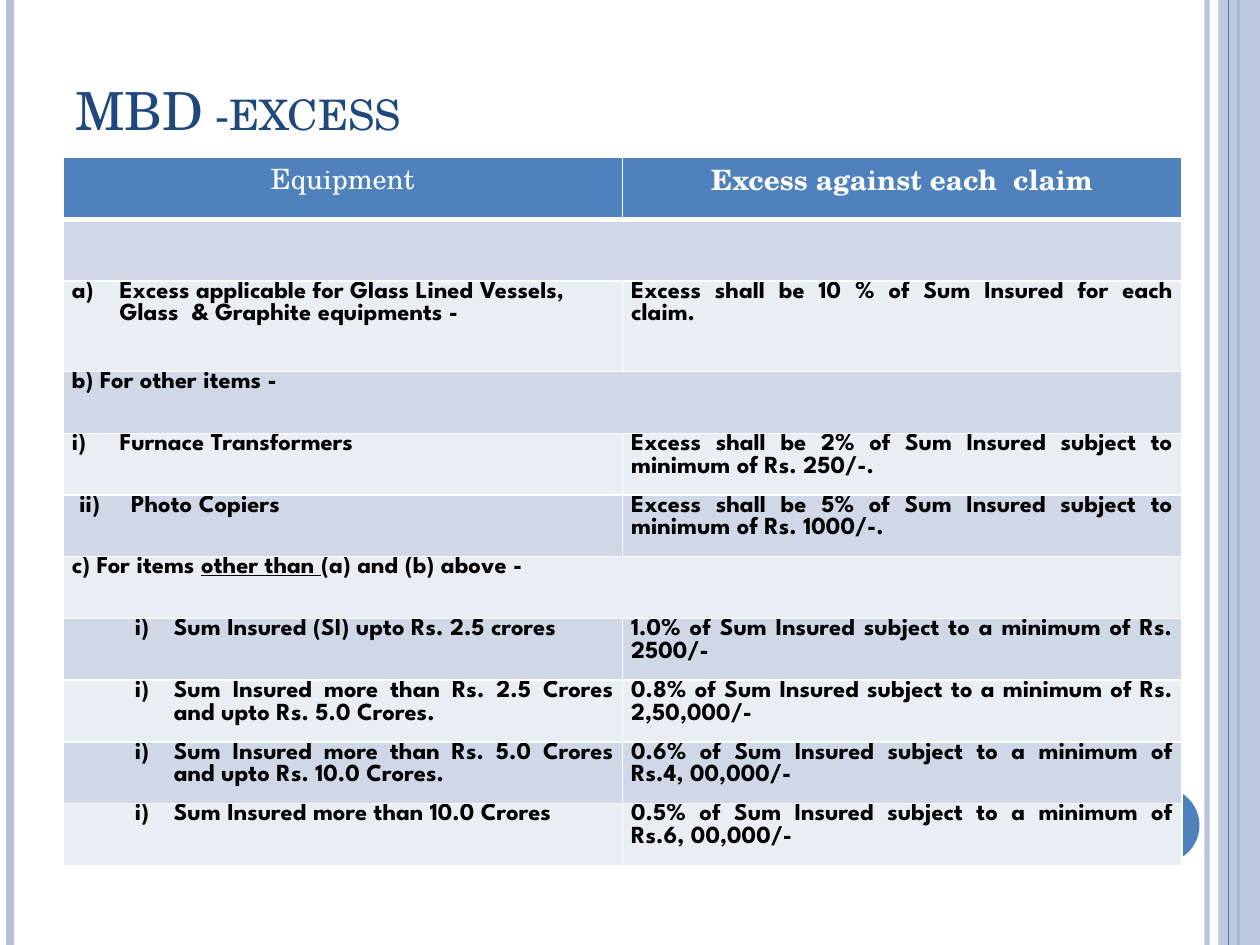
"""Build a slide with a table of insurance excess amounts."""
from dataclasses import dataclass
from typing import Optional

import pptx
import pptx.dml.color
import pptx.enum.shapes
import pptx.enum.text
import pptx.oxml
import pptx.oxml.ns
import pptx.util

Inches = pptx.util.Inches
Pt = pptx.util.Pt
RGBColor = pptx.dml.color.RGBColor
Align = pptx.enum.text.PP_ALIGN
Shape = pptx.enum.shapes.MSO_SHAPE
qn = pptx.oxml.ns.qn

BLUE = RGBColor(0x4F, 0x81, 0xBD)
PALE = RGBColor(0xB3, 0xC1, 0xDB)
NAVY = RGBColor(0x1F, 0x49, 0x7D)
WHITE = RGBColor(0xFF, 0xFF, 0xFF)
BLACK = RGBColor(0x00, 0x00, 0x00)
BANDS = (RGBColor(0xD0, 0xD8, 0xE8), RGBColor(0xE9, 0xED, 0xF4))
SERIF = "TeX Gyre Schola"
SANS = "League Spartan"


@dataclass
class Stripe:
    x: float
    width: float
    color: RGBColor
    alpha: int = 100


@dataclass
class Bullet:
    style: str
    left: float
    hang: float
    start: int = 1


@dataclass
class Entry:
    words: tuple[str, ...] = ()
    excess: Optional[str] = None
    bullet: Optional[Bullet] = None
    align: Align = Align.LEFT
    height: float = 0.49


ALPHA = Bullet("alphaLcParenR", 0.38, 0.38)
ROMAN = Bullet("romanLcParenR", 0.38, 0.38)
SECOND = Bullet("romanLcParenR", 0.47, 0.41, 2)
INNER = Bullet("romanLcParenR", 0.81, 0.31)

EDGES = (
    Stripe(9.58, 3, PALE, 93),
    Stripe(0.08, 4.5, PALE),
    Stripe(9.83, 1.5, BLUE),
)
FRONT = Stripe(9.75, 0.75, BLUE)

ENTRIES = (
    Entry(),
    Entry(("Excess applicable for Glass Lined Vessels, Glass  & Graphite equipments -",),
          "Excess shall be 10 % of Sum Insured for each claim.", ALPHA, height=0.72),
    Entry(("b) For other items -",)),
    Entry(("Furnace Transformers",),
          "Excess shall be 2% of Sum Insured subject to minimum of Rs. 250/-.", ROMAN),
    Entry(("Photo Copiers",),
          "Excess shall be 5% of Sum Insured subject to minimum of Rs. 1000/-.", SECOND),
    Entry(("c) For items ", "other than ", "(a) and (b) above -")),
    Entry(("Sum Insured (SI) upto Rs. 2.5 crores",),
          "1.0% of Sum Insured subject to a minimum of Rs. 2500/-", INNER),
    Entry(("Sum Insured more than Rs. 2.5 Crores and upto Rs. 5.0 Crores.",),
          "0.8% of Sum Insured subject to a minimum of Rs. 2,50,000/-", INNER, Align.JUSTIFY),
    Entry(("Sum Insured more than Rs. 5.0 Crores and upto Rs. 10.0 Crores.",),
          "0.6% of Sum Insured subject to a minimum of Rs.4, 00,000/-", INNER, Align.JUSTIFY),
    Entry(("Sum Insured more than 10.0 Crores",),
          "0.5% of Sum Insured subject to a minimum of Rs.6, 00,000/-", INNER),
)


def add_node(parent, tag: str, **attrs: str):
    node = parent.makeelement(qn(tag), attrs)
    parent.append(node)
    return node


def fade(props, alpha: int) -> None:
    color = next(props.iter(qn("a:srgbClr")))
    add_node(color, "a:alpha", val=str(alpha * 1000))


def draw_stripe(slide, stripe: Stripe) -> None:
    x = Inches(stripe.x)
    line = slide.shapes.add_connector(
        pptx.enum.shapes.MSO_CONNECTOR.STRAIGHT, x, 0, x, Inches(7.5))
    line.line.color.rgb = stripe.color
    line.line.width = Pt(stripe.width)
    props = line._element.spPr
    if stripe.alpha < 100:
        fade(props, stripe.alpha)
    add_node(props, "a:effectLst")


def draw_shape(slide, kind: Shape, box: tuple[float, ...], color: RGBColor):
    shape = slide.shapes.add_shape(kind, *map(Inches, box))
    shape.shadow.inherit = False
    shape.fill.solid()
    shape.fill.fore_color.rgb = color
    shape.line.fill.background()
    return shape


def add_run(para, text: str, size: float, face: str, color: RGBColor, bold: bool):
    run = para.add_run()
    run.text = text
    run.font.size = Pt(size)
    run.font.name = face
    run.font.color.rgb = color
    run.font.bold = bold
    return run


def draw_title(slide) -> None:
    box = slide.shapes.add_textbox(*map(Inches, (0.5, 0.3, 8.17, 0.87)))
    frame = box.text_frame
    frame.word_wrap = True
    frame.vertical_anchor = pptx.enum.text.MSO_ANCHOR.BOTTOM
    run = add_run(frame.paragraphs[0], "MBD -excess", 30, SERIF, NAVY, False)
    run._r.get_or_add_rPr().set("cap", "small")


def style_cell(cell, color: RGBColor, top: float, base: float) -> None:
    cell.margin_left = cell.margin_right = Inches(0.07)
    cell.margin_top = cell.margin_bottom = 0
    props = cell._tc.get_or_add_tcPr()
    for side, width in (("L", 1), ("R", 1), ("T", top), ("B", base)):
        line = add_node(props, f"a:ln{side}", w=str(Pt(width)))
        fill = add_node(line, "a:solidFill")
        add_node(fill, "a:srgbClr", val=str(WHITE))
    cell.fill.solid()
    cell.fill.fore_color.rgb = color


def set_bullet(para, bullet: Bullet) -> None:
    props = para._p.get_or_add_pPr()
    props.set("marL", str(Inches(bullet.left)))
    props.set("indent", str(-Inches(bullet.hang)))
    add_node(props, "a:buFont", typeface=SANS)
    add_node(props, "a:buAutoNum", type=bullet.style, startAt=str(bullet.start))


def fill_row(table, row: int, entry: Entry) -> None:
    table.rows[row].height = Inches(entry.height)
    left, right = table.cell(row, 0), table.cell(row, 1)
    for cell in (left, right):
        style_cell(cell, BANDS[(row - 1) % 2], 3 if row == 1 else 1, 1)
    para = left.text_frame.paragraphs[0]
    para.alignment = entry.align
    if entry.bullet:
        set_bullet(para, entry.bullet)
    for i, word in enumerate(entry.words):
        run = add_run(para, word, 14, SANS, BLACK, True)
        run.font.underline = i == 1
    if entry.excess is None:
        left.merge(right)
    else:
        para = right.text_frame.paragraphs[0]
        para.alignment = Align.JUSTIFY
        add_run(para, entry.excess, 14, SANS, BLACK, True)


def draw_table(slide) -> None:
    frame = slide.shapes.add_table(
        len(ENTRIES) + 1, 2, *map(Inches, (0.5, 1.25, 8.88, 5.61)))
    table = frame.table
    table.rows[0].height = Inches(0.49)
    heads = (("Equipment", False), ("Excess against each  claim", True))
    for col, (text, bold) in enumerate(heads):
        table.columns[col].width = Inches(4.44)
        cell = table.cell(0, col)
        style_cell(cell, BLUE, 1, 3)
        para = cell.text_frame.paragraphs[0]
        para.alignment = Align.CENTER
        add_run(para, text, 16, SERIF, WHITE, bold)
    for row, entry in enumerate(ENTRIES, 1):
        fill_row(table, row, entry)


def main() -> None:
    deck = pptx.Presentation()
    deck.slide_width, deck.slide_height = Inches(10), Inches(7.5)
    slide = deck.slides.add_slide(deck.slide_layouts[6])
    for stripe in EDGES:
        draw_stripe(slide, stripe)
    band = draw_shape(slide, Shape.RECTANGLE, (9.67, 0, 0.33, 7.5), PALE)
    fade(band._element.spPr, 87)
    draw_stripe(slide, FRONT)
    draw_shape(slide, Shape.OVAL, (8.92, 6.25, 0.6, 0.6), BLUE)
    draw_title(slide)
    draw_table(slide)
    deck.save("out.pptx")


if __name__ == "__main__":
    main()
